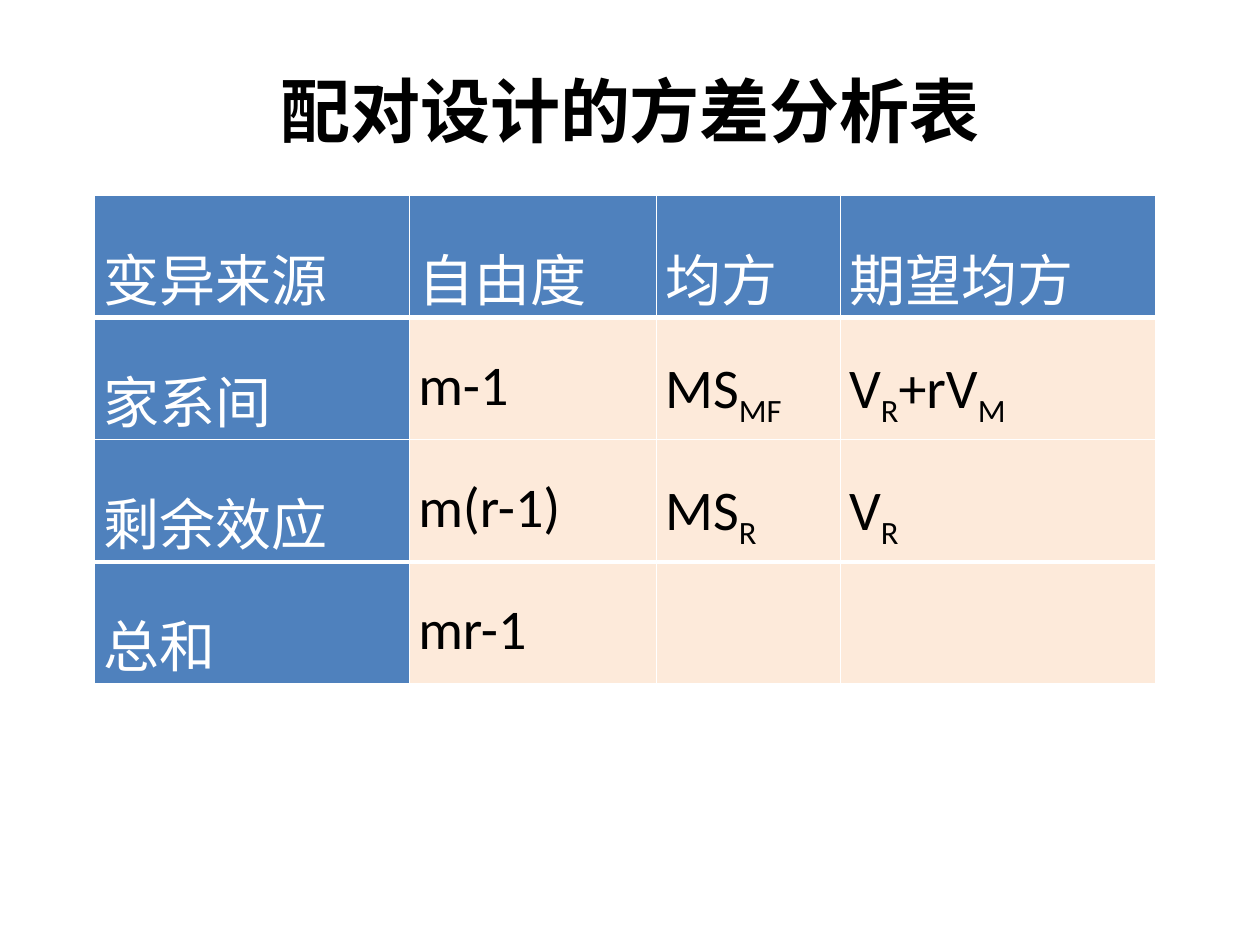
from lxml import etree
from pptx import Presentation
from pptx import util as u
from pptx.dml.color import RGBColor
from pptx.enum import text
from pptx.oxml import ns

COLORS = {"ink": "000000", "white": "FFFFFF", "header": "4F81BD", "body": "FDEADA"}
COLUMN_WIDTHS = [2.5, 1.96, 1.46, 2.5]
ROW_HEIGHT = 0.97
HEAVY_RULES = {1, 3}
ANOVA_ROWS = [
    ["变异来源", "自由度", "均方", "期望均方"],
    ["家系间", "m-1", "MS_MF", "V_R_+rV_M"],
    ["剩余效应", "m(r-1)", "MS_R", "V_R"],
    ["总和", "mr-1", "", ""],
]


class SlideWriter:
    """Hold the text style and the current slide, and add its elements."""

    def __init__(self, slide, font="Calibri", size=32):
        self.slide = slide
        self.font = font
        self.size = size

    def style(self, run, color, font=None, size=None, bold=False):
        run.font.name = font or self.font
        run.font.size = u.Pt(size or self.size)
        run.font.bold = bold
        run.font.color.rgb = RGBColor.from_string(COLORS[color])

    def title(self, wording, left, top, width, height):
        heading = self.slide.shapes.title
        heading.left, heading.top = u.Inches(left), u.Inches(top)
        heading.width, heading.height = u.Inches(width), u.Inches(height)
        heading.text_frame.text = wording
        heading.text_frame.vertical_anchor = text.MSO_ANCHOR.MIDDLE
        line = heading.text_frame.paragraphs[0]
        line.alignment = text.PP_ALIGN.CENTER
        self.style(line.runs[0], "ink", "Times New Roman", 40, True)

    def border(self, cell, side, points):
        properties = cell._tc.get_or_add_tcPr()
        edge = etree.SubElement(properties, ns.qn(f"a:ln{side}"), w=str(u.Pt(points)))
        fill = etree.SubElement(edge, ns.qn("a:solidFill"))
        etree.SubElement(fill, ns.qn("a:srgbClr"), val=COLORS["white"])

    def formula(self, cell, wording, color):
        """Write wording whose subscripts are set off by underscores."""
        line = cell.text_frame.paragraphs[0]
        line.line_spacing = 1.5
        for index, part in enumerate(wording.split("_")):
            if part:
                run = line.add_run()
                run.text = part
                self.style(run, color)
                if index % 2:
                    run._r.get_or_add_rPr().set("baseline", "-25000")

    def cell(self, cell, wording, row, is_header):
        cell.margin_left = cell.margin_right = u.Inches(0.07)
        cell.margin_top = cell.margin_bottom = 0
        rules = {"L": 1, "R": 1, "T": 3 if row in HEAVY_RULES else 1,
                 "B": 3 if row + 1 in HEAVY_RULES else 1}
        for side, points in rules.items():
            self.border(cell, side, points)
        cell.fill.solid()
        cell.fill.fore_color.rgb = RGBColor.from_string(COLORS["header" if is_header else "body"])
        self.formula(cell, wording, "white" if is_header else "ink")

    def table(self, rows, left, top, widths, row_height):
        grid = self.slide.shapes.add_table(
            len(rows), len(widths), u.Inches(left), u.Inches(top),
            u.Inches(sum(widths)), u.Inches(row_height * len(rows))).table
        for column, width in zip(grid.columns, widths):
            column.width = u.Inches(width)
        for r, row in enumerate(rows):
            grid.rows[r].height = u.Inches(row_height)
            for c, wording in enumerate(row):
                self.cell(grid.cell(r, c), wording, r, r == 0 or c == 0)


def main():
    deck = Presentation()
    deck.slide_width, deck.slide_height = u.Inches(10), u.Inches(7.5)
    writer = SlideWriter(deck.slides.add_slide(deck.slide_layouts[5]))
    writer.title("配对设计的方差分析表", 0.5, 0.44, 9, 0.85)
    writer.table(ANOVA_ROWS, 0.75, 1.55, COLUMN_WIDTHS, ROW_HEIGHT)
    deck.save("out.pptx")


if __name__ == "__main__":
    main()
